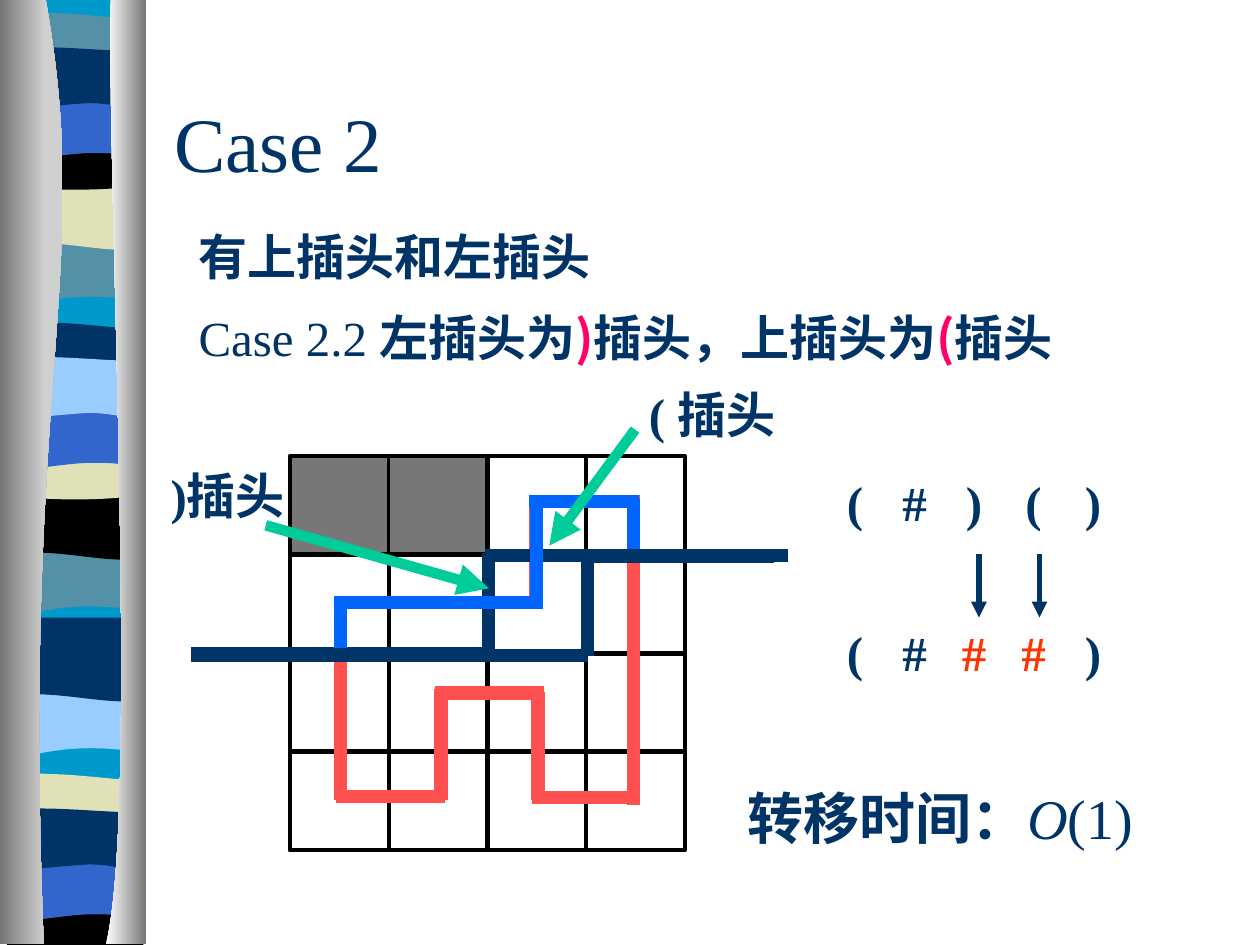
from dataclasses import dataclass

from lxml import etree
from pptx import Presentation
from pptx import util as u
from pptx.dml.color import RGBColor
from pptx.enum import shapes, text
from pptx.oxml import ns

Pt = u.Pt


@dataclass(frozen=True)
class Theme:
    navy: str = "003366"
    teal: str = "5490A8"
    sand: str = "E1E1B7"
    royal: str = "3366CC"
    sky: str = "99CCFF"
    cyan: str = "0099CC"
    black: str = "000000"
    gray: str = "777777"
    shade: str = "767676"
    silver: str = "D0D0D0"
    white: str = "FFFFFF"
    red: str = "FF5050"
    blue: str = "0066FF"
    green: str = "00CC99"
    pink: str = "FF0066"
    orange: str = "FF3300"
    latin: str = "Times New Roman"
    cjk: str = "Noto Sans CJK SC"
    title: int = 44
    body: int = 28
    result: int = 32


T = Theme()

# Band outlines: 2 numbers are a corner, 6 numbers a Bézier curve
BANDS = {
    "deep": [(82, 133), (82, 172), (28, 164, 17, 179, 4, 172), (4, 133)],
    "wide": [(82, 95), (82, 140.5), (69, 148, 28, 134, 4, 140.5), (4, 95)],
    "thin": [(82, 11.5), (82, 32.4), (69, 36, 17, 36, 4, 32.4), (4, 11.5),
             (9, 6, 21, 7, 34, 7.5), (47, 8, 72, 11, 82, 11.5)],
    "arch": [(82, 78), (82, 105), (69, 109.5, 17, 109.5, 4, 105), (4, 78),
             (52, 81.5, 65.5, 78, 82, 78)],
    "hump": [(82, 53.3), (82, 92), (70, 87.5, 65, 87.5, 52, 87.5),
             (39, 87.5, 16, 92, 4, 92), (4, 53.3)],
    "cap": [(82, 29), (82, 59.5), (77, 64, 65, 59, 52, 59),
            (39, 59, 12, 64, 4, 59.5), (4, 29), (15, 24.5, 57, 29, 70, 29)],
}
# Each repeat: offset of the deep and wide bands, offset of the others, colours
REPEATS = [
    (0, 0, (T.teal, T.sand, T.teal, T.black, T.royal, T.navy)),
    (177, 177, (T.teal, T.black, T.navy, T.sand, T.royal, T.sky)),
    (258, 435, (T.sky, T.navy, T.sand, T.black, T.royal, T.navy)),
]

# Line segments: x1, y1, x2, y2
RED_LOOP = [
    (194.7, 343.4, 194.7, 457.2), (191.5, 344.2, 309.6, 344.2),
    (306, 284.4, 306, 347), (303.1, 286.6, 365.8, 286.6),
    (362.2, 284.4, 362.2, 460.1), (303.8, 455.8, 365.8, 455.8),
    (307.4, 395.3, 307.4, 457.2), (248.4, 396, 311, 396),
    (252, 393.8, 252, 457.2), (192.2, 455, 254.2, 455),
]
FRONTIER = [
    (109.4, 374.4, 336.2, 374.4), (334.8, 318.2, 442.1, 318.2),
    (335.5, 315.4, 335.5, 375.1), (109.4, 373.7, 282.2, 373.7),
    (277.2, 317.5, 450, 317.5), (279.4, 316.1, 279.4, 375.1),
]
BLUE_PATH = [
    (194.7, 342, 194.7, 370.1), (191, 344.2, 307.4, 344.2),
    (306.4, 285.1, 306.4, 347.8), (302.4, 286.6, 365.4, 286.6),
    (361.8, 285.1, 361.8, 313.9),
]


def color(value):
    return RGBColor.from_string(value)


def curve_sides(sp, outline):
    """Replace straight sides by the outline's Bézier curves."""
    sides = list(sp._element.iter(ns.qn("a:lnTo")))
    for side, part in zip(sides, outline[1:]):
        if len(part) == 2:
            continue
        curve = etree.Element(ns.qn("a:cubicBezTo"))
        for x, y in zip(part[::2], part[1::2]):
            etree.SubElement(curve, ns.qn("a:pt"), x=str(Pt(x) - sp.left), y=str(Pt(y) - sp.top))
        side.getparent().replace(side, curve)


def add_outline(s, outline, fill, dy=0):
    """Closed freeform; a pair of colours makes a left-to-right gradient."""
    points = [(Pt(part[-2]), Pt(part[-1])) for part in outline]
    fb = s.shapes.build_freeform(*points[0], scale=1.0)
    fb.add_line_segments(points[1:], close=True)
    sp = fb.convert_to_shape()
    curve_sides(sp, outline)
    sp.top += Pt(dy)
    sp.shadow.inherit = False
    sp.line.fill.background()
    if isinstance(fill, tuple):
        sp.fill.gradient()
        sp.fill.gradient_angle = 0
        for stop, value in zip(sp.fill.gradient_stops, fill):
            stop.color.rgb = color(value)
    else:
        sp.fill.solid()
        sp.fill.fore_color.rgb = color(fill)


def add_box(s, x, y, w, h, width, fill=None):
    sp = s.shapes.add_shape(shapes.MSO_SHAPE.RECTANGLE, Pt(x), Pt(y), Pt(w), Pt(h))
    sp.shadow.inherit = False
    sp.line.color.rgb = color(T.black)
    sp.line.width = Pt(width)
    if fill:
        sp.fill.solid()
        sp.fill.fore_color.rgb = color(fill)
    else:
        sp.fill.background()


def add_line(s, x1, y1, x2, y2, stroke, width, arrow=False):
    c = s.shapes.add_connector(shapes.MSO_CONNECTOR.STRAIGHT, Pt(x1), Pt(y1), Pt(x2), Pt(y2))
    c.line.color.rgb = color(stroke)
    c.line.width = Pt(width)
    if arrow:
        etree.SubElement(c.line._get_or_add_ln(), ns.qn("a:tailEnd"), type="triangle")
    etree.SubElement(c._element.spPr, ns.qn("a:effectLst"))


def set_font(font, size, name=T.latin, bold=True, italic=False, fill=T.navy):
    font.size, font.name, font.bold, font.italic = Pt(size), name, bold, italic
    font.color.rgb = color(fill)
    latin = font._rPr.find(ns.qn("a:latin"))
    latin.addnext(etree.Element(ns.qn("a:ea"), typeface=T.cjk))


def add_text(s, x, y, w, h, runs, size, middle=False, center=False, **style):
    """Text box; runs is one string, or (string, style) pairs."""
    tf = s.shapes.add_textbox(Pt(x), Pt(y), Pt(w), Pt(h)).text_frame
    tf.word_wrap = not center
    if middle:
        tf.vertical_anchor = text.MSO_ANCHOR.MIDDLE
    p = tf.paragraphs[0]
    if center:
        p.alignment = text.PP_ALIGN.CENTER
    if isinstance(runs, str):
        p.add_run().text = runs
        set_font(p.font, size, **style)
        return
    for words, run_style in runs:
        r = p.add_run()
        r.text = words
        set_font(r.font, size, **run_style)


def add_symbols(s, y, symbols, changed=()):
    for i, symbol in enumerate(symbols):
        add_text(s, 471.6 + 34 * i, y, 34, 34, symbol, T.body, middle=True, center=True,
                 fill=T.orange if i in changed else T.navy)


def add_ribbon(s):
    add_outline(s, [(82, -0.7), (82, 538), (4, 538), (4, -0.7)], T.cyan)
    for big_dy, small_dy, colors in REPEATS:
        for (name, outline), fill in zip(BANDS.items(), colors):
            add_outline(s, outline, fill, big_dy if name in ("deep", "wide") else small_dy)
    add_outline(s, [(26, -0.7), (54, 155.5, 12, 213, 25, 539.5), (0, 539.5), (0, -0.7)],
                (T.shade, T.silver))
    add_outline(s, [(63.4, -0.7), (60.5, 90, 80, 465, 60.5, 539.5), (83.5, 539.5), (83.5, 0)],
                (T.white, T.shade))


def add_grid(s):
    add_box(s, 278.6, 318.2, 57.6, 54, 0.75)
    for row in range(4):
        for col in range(4):
            blocked = row == 0 and col < 2
            add_box(s, 165.6 + 56.4 * col, 260.6 + 56.2 * row, 56.8, 56.8, 2.25,
                    T.gray if blocked else None)


def main():
    prs = Presentation()
    prs.slide_width, prs.slide_height = Pt(720), Pt(540)
    s = prs.slides.add_slide(prs.slide_layouts[6])
    cjk, pink = {"name": T.cjk}, {"name": T.cjk, "fill": T.pink}

    # Decorative side ribbon
    add_ribbon(s)

    # Headings
    add_text(s, 92.5, 36, 147.6, 90, "Case 2", T.title, middle=True, bold=False)
    add_text(s, 106.6, 126, 570, 41, "有上插头和左插头", T.body, **cjk)

    # Grid with its path and frontier
    add_grid(s)
    for segments, stroke in ((RED_LOOP, T.red), (FRONTIER, T.navy), (BLUE_PATH, T.blue)):
        for segment in segments:
            add_line(s, *segment, stroke, 7.5)

    # Transfer time
    add_text(s, 419.8, 444.2, 270, 45.4, [
        ("转移时间：", cjk), ("O", {"bold": False, "italic": True}),
        ("(1)", {"bold": False})], T.result)

    # State before and after
    add_symbols(s, 270, "(#)()")
    for x in (559.4, 594):
        add_line(s, x, 316.8, x, 352.8, T.navy, 3, arrow=True)
    add_symbols(s, 355.7, "(###)", changed=(2, 3))

    # Plug labels and pointers
    add_line(s, 151.9, 300.2, 279.4, 336.2, T.green, 6, arrow=True)
    add_text(s, 356.7, 216, 113.8, 41, " ( 插头", T.body)
    add_line(s, 362.9, 245.5, 313.9, 311.8, T.green, 6, arrow=True)
    add_text(s, 90.4, 262.4, 113.8, 41, ")插头", T.body)

    # Case statement
    add_text(s, 106.4, 172, 613.4, 41, [
        ("Case 2.2 ", {"bold": False}), ("左插头为", cjk), (")", pink),
        ("插头，上插头为", cjk), ("(", pink), ("插头", cjk)], T.body)

    prs.save("out.pptx")


if __name__ == "__main__":
    main()
